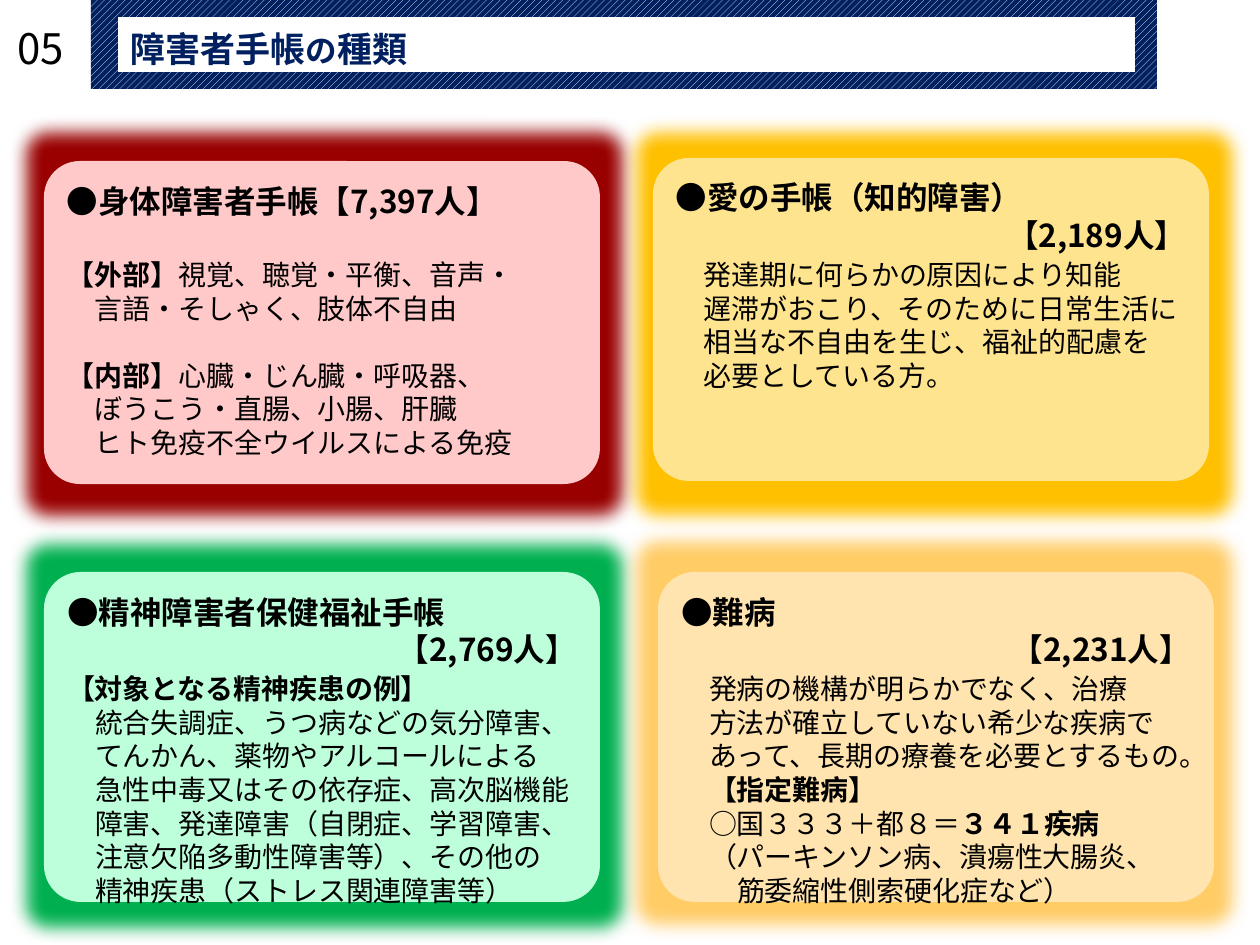
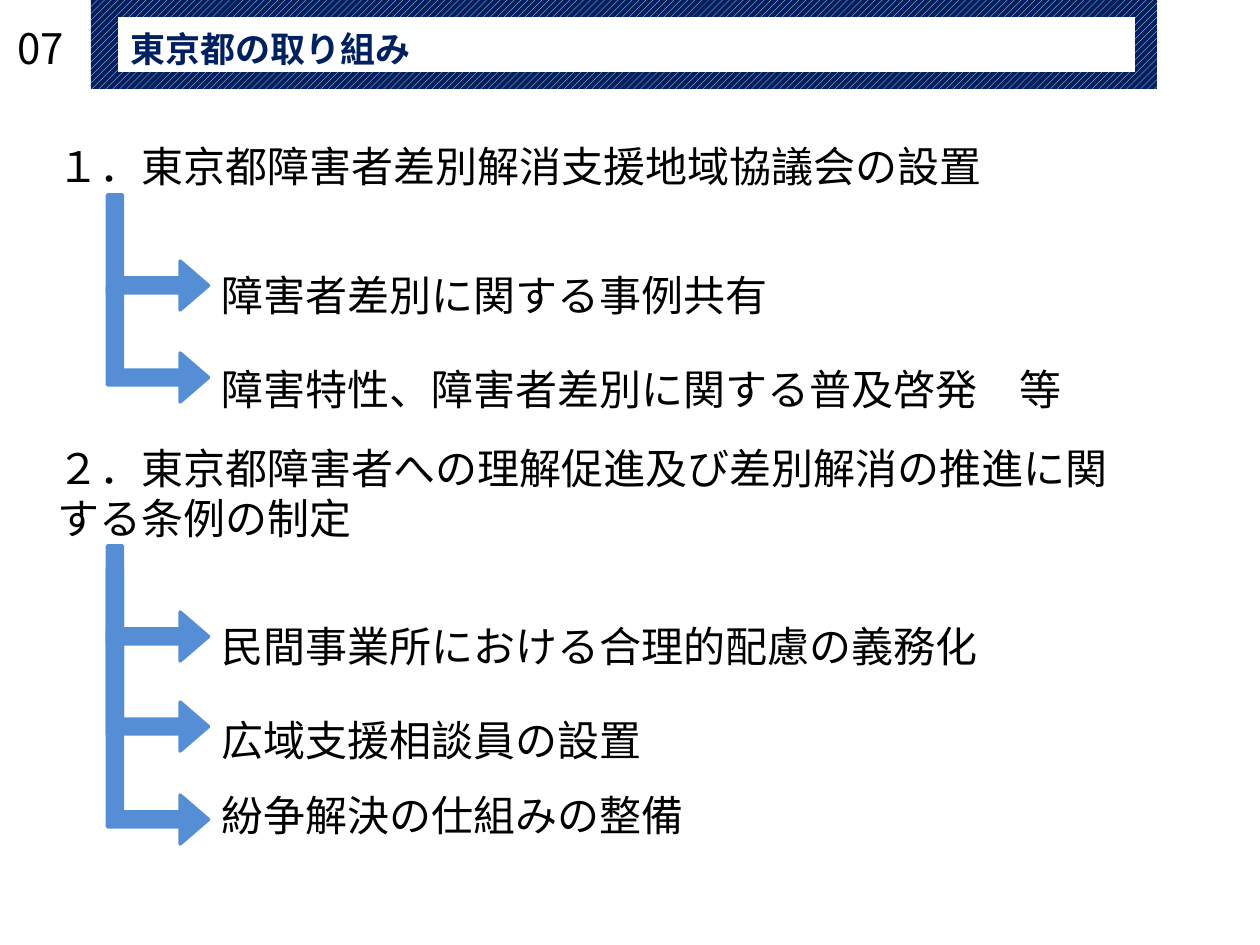
from lxml.etree import SubElement
from pptx import Presentation
from pptx.dml.color import RGBColor
from pptx.enum.dml import MSO_PATTERN
from pptx.enum.shapes import MSO_SHAPE
from pptx.enum.text import MSO_ANCHOR, PP_ALIGN
from pptx.oxml.ns import qn
from pptx.util import Pt

EMU_PER_PX = 914400 / 126
FONT = "Noto Sans CJK JP"
LINE_HEIGHT = 1.2
COLOURS = {
    "black": "000000", "white": "FFFFFF", "navy": "002060", "arrow": "558ED5",
    "red": "990000", "pink": "FFC9C9", "gold": "FFC000", "yellow": "FFE48F",
    "green": "00B050", "mint": "BDFFDB", "orange": "FFCC66", "cream": "FFE4AF",
}
BOLD = {"bold": True}


def px(length):
    return round(length * EMU_PER_PX)


def colour(name):
    return RGBColor.from_string(COLOURS[name])


def set_attributes(target, values):
    for name, value in values.items():
        setattr(target, name, value)


def add_block(page, kind, frame, fill=None, adjustments=()):
    block = page.shapes.add_shape(kind, *map(px, frame))
    block.shadow.inherit = False
    block.line.fill.background()
    if fill:
        block.fill.solid()
        block.fill.fore_color.rgb = colour(fill)
    for index, value in enumerate(adjustments):
        block.adjustments[index] = value
    return block


def line(*spans, size=16, indent=0, before=0, align=PP_ALIGN.LEFT):
    """Describe a paragraph; each span is a string or a (string, format) pair."""
    return {"spans": spans, "size": size, "indent": indent,
            "before": before, "align": align}


def write_lines(box, lines, ink="black", anchor=MSO_ANCHOR.TOP):
    text_frame = box.text_frame
    set_attributes(text_frame, {
        "word_wrap": True, "vertical_anchor": anchor,
        "margin_top": px(10), "margin_bottom": px(2),
    })
    for index, content in enumerate(lines):
        para = text_frame.add_paragraph() if index else text_frame.paragraphs[0]
        set_attributes(para, {
            "alignment": content["align"],
            "line_spacing": Pt(content["size"] * LINE_HEIGHT),
            "space_before": Pt(content["before"]),
        })
        if content["indent"]:
            para._p.get_or_add_pPr().set("marL", str(px(content["indent"])))
        for item in content["spans"]:
            text, formats = (item, {}) if isinstance(item, str) else item
            span = para.add_run()
            span.text = text
            set_attributes(span.font, {
                "name": FONT, "size": Pt(content["size"]), "bold": False, **formats,
            })
            span.font.color.rgb = colour(ink)
            SubElement(span._r.get_or_add_rPr(), qn("a:ea"), typeface=FONT)


def add_text(page, frame, text):
    box = page.shapes.add_textbox(*map(px, frame))
    write_lines(box, [line(text, size=24)])


def add_header(page, number, *title):
    band = add_block(page, MSO_SHAPE.RECTANGLE, (91, 0, 1066, 89))
    band.fill.patterned()
    band.fill.pattern = MSO_PATTERN.WIDE_UPWARD_DIAGONAL
    band.fill.fore_color.rgb = colour("white")
    band.fill.back_color.rgb = colour("navy")
    panel = add_block(page, MSO_SHAPE.RECTANGLE, (118, 17, 1017, 55), "white")
    write_lines(panel, [line(*title, size=20)], "navy", MSO_ANCHOR.MIDDLE)
    add_text(page, (5, 13, 79, 63), number)


def add_glow(page, left, top, fill):
    """Add the soft-edged backdrop of a card."""
    glow = add_block(page, MSO_SHAPE.ROUNDED_RECTANGLE, (left, top, 630, 417),
                     fill, [0.054])
    effects = glow._element.spPr.find(qn("a:effectLst"))
    SubElement(effects, qn("a:softEdge"), rad="127000")


def add_card(page, frame, fill, lines):
    card = add_block(page, MSO_SHAPE.ROUNDED_RECTANGLE, frame, fill, [0.111])
    write_lines(card, lines)


def heading(text):
    return line((text, BOLD), size=18)


def headcount(text):
    return line((text, BOLD), size=18, align=PP_ALIGN.RIGHT)


def body(*texts):
    """Indented lines, the first set slightly apart from the headcount."""
    return [line(text, indent=28, before=0 if index else 2)
            for index, text in enumerate(texts)]


def indented(*texts):
    return [line(text, indent=28) for text in texts]


def add_bent_arrow(page, top, length):
    """Add an arrow that runs down from top, then turns right."""
    depth, centre = 101, 158
    frame = (centre - length / 2, top + (length - depth) / 2, length, depth)
    arrow = add_block(page, MSO_SHAPE.BENT_UP_ARROW, frame, "arrow",
                      [0.148, 0.242, 0.281])
    arrow.rotation = 90
    arrow.line.color.rgb = colour("arrow")
    arrow.line.width = Pt(2)


def build_handbook_types(page):
    for left, top, fill in ((10, 116, "red"), (620, 116, "gold"),
                            (10, 528, "green"), (620, 525, "orange")):
        add_glow(page, left, top, fill)
    add_card(page, (44, 161, 556, 323), "pink", [
        heading("●身体障害者手帳【7,397人】"),
        line(("【外部】", BOLD), "視覚、聴覚・平衡、音声・", before=22),
        *indented("言語・そしゃく、肢体不自由"),
        line(("【内部】", BOLD), "心臓・じん臓・呼吸器、", before=19),
        *indented("ぼうこう・直腸、小腸、肝臓", "ヒト免疫不全ウイルスによる免疫"),
    ])
    add_card(page, (653, 158, 556, 323), "yellow", [
        heading("●愛の手帳（知的障害）"),
        headcount("【2,189人】"),
        *body("発達期に何らかの原因により知能",
              "遅滞がおこり、そのために日常生活に",
              "相当な不自由を生じ、福祉的配慮を",
              "必要としている方。"),
    ])
    add_card(page, (44, 572, 556, 330), "mint", [
        heading("●精神障害者保健福祉手帳"),
        headcount("【2,769人】"),
        line(("【対象となる精神疾患の例】", BOLD), before=2),
        *indented("統合失調症、うつ病などの気分障害、",
                  "てんかん、薬物やアルコールによる",
                  "急性中毒又はその依存症、高次脳機能",
                  "障害、発達障害（自閉症、学習障害、",
                  "注意欠陥多動性障害等）、その他の",
                  "精神疾患（ストレス関連障害等）"),
    ])
    add_card(page, (658, 572, 556, 330), "cream", [
        heading("●難病"),
        headcount("【2,231人】"),
        *body("発病の機構が明らかでなく、治療",
              "方法が確立していない希少な疾病で",
              "あって、長期の療養を必要とするもの。"),
        line(("【指定難病】", BOLD), indent=28),
        line("○国３３３＋都８＝", ("３４１疾病", BOLD), indent=28),
        *indented("（パーキンソン病、潰瘍性大腸炎、"),
        line("筋委縮性側索硬化症など）", indent=56),
    ])
    add_header(page, "05", ("障害者手帳", BOLD),
               ("の", {"bold": True, "size": Pt(18)}), ("種類", BOLD))


def build_city_measures(page):
    add_header(page, "07", ("東京都の取り組み", BOLD))
    for top, height, text in (
        (131, 63, "１．東京都障害者差別解消支援地域協議会の設置"),
        (432, 115, "２．東京都障害者への理解促進及び差別解消の推進に関する条例の制定"),
    ):
        add_text(page, (45, top, 1091, height), text)
    for arrow_top, arrow_length, text_top, text in (
        (195, 115, 260, "障害者差別に関する事例共有"),
        (287, 115, 354, "障害特性、障害者差別に関する普及啓発　等"),
        (546, 115, 611, "民間事業所における合理的配慮の義務化"),
        (568, 183, 704, "広域支援相談員の設置"),
        (631, 213, 780, "紛争解決の仕組みの整備"),
    ):
        add_bent_arrow(page, arrow_top, arrow_length)
        add_text(page, (209, text_top, 890, 63), text)


def main():
    deck = Presentation()
    set_attributes(deck, {"slide_width": px(1260), "slide_height": px(945)})
    for build in (build_handbook_types, build_city_measures):
        build(deck.slides.add_slide(deck.slide_layouts[6]))
    deck.save("out.pptx")


if __name__ == "__main__":
    main()
